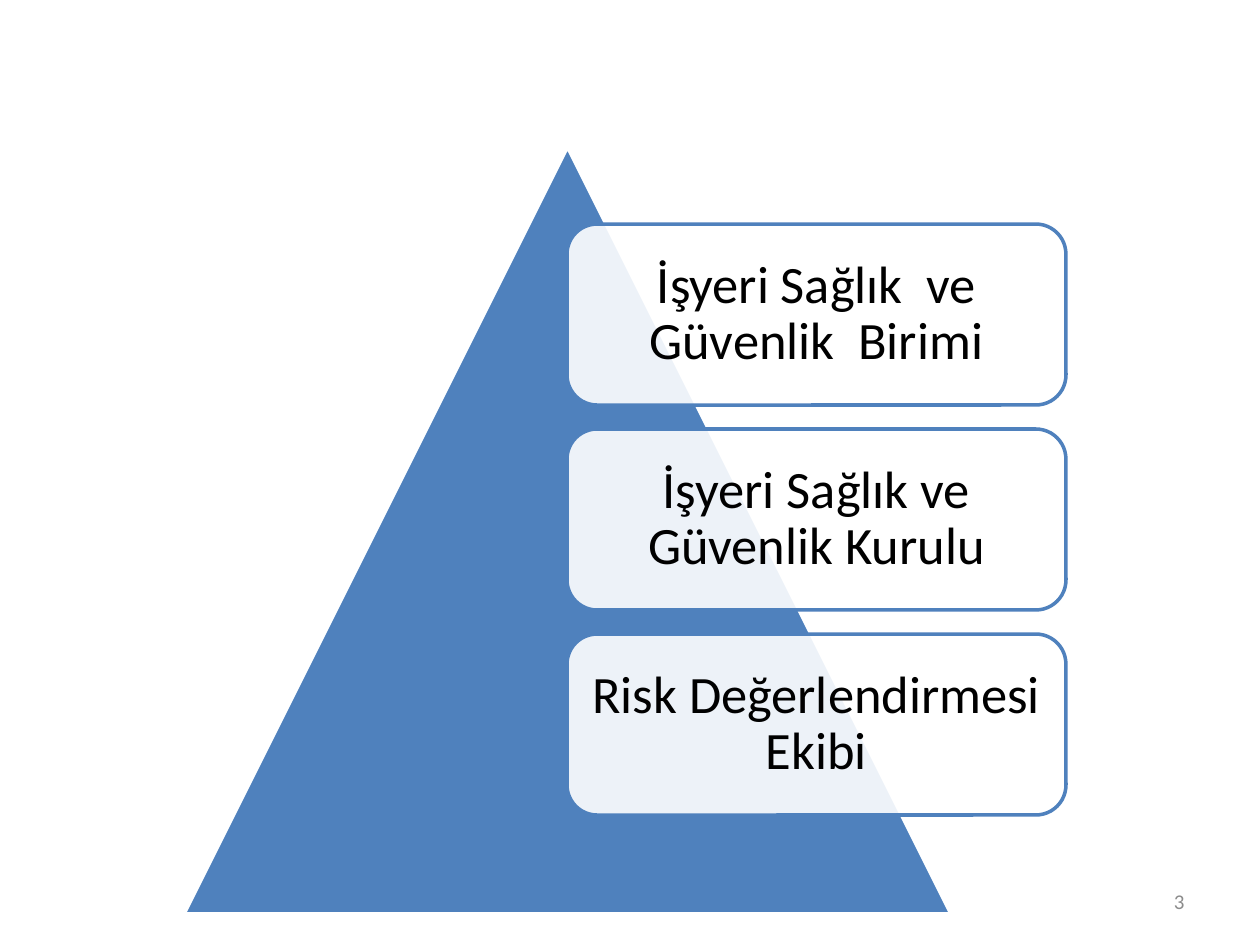
import pptx
import pptx.dml.color
import pptx.enum.shapes
import pptx.enum.text
import pptx.oxml.ns
import pptx.util
from lxml import etree

RGBColor = pptx.dml.color.RGBColor
MSO_SHAPE = pptx.enum.shapes.MSO_SHAPE
PP_ALIGN = pptx.enum.text.PP_ALIGN

BLUE = RGBColor(0x4F, 0x81, 0xBD)
WHITE = RGBColor(0xFF, 0xFF, 0xFF)
BLACK = RGBColor(0x00, 0x00, 0x00)
GRAY = RGBColor(0x8C, 0x8C, 0x8C)

PX_PER_INCH = 126
UNITS = [
    "İşyeri Sağlık  ve Güvenlik  Birimi",
    "İşyeri Sağlık ve Güvenlik Kurulu",
    "Risk Değerlendirmesi Ekibi",
]


def px(length):
    return pptx.util.Emu(round(length * pptx.util.Inches(1) / PX_PER_INCH))


def write(shape, text, *, size, color, align, inset=None, line_spacing=None):
    frame = shape.text_frame
    frame.word_wrap = True
    frame.vertical_anchor = pptx.enum.text.MSO_ANCHOR.MIDDLE
    if inset is not None:
        frame.margin_left = frame.margin_right = px(inset)
        frame.margin_top = frame.margin_bottom = px(inset)
    paragraph = frame.paragraphs[0]
    paragraph.alignment = align
    paragraph.line_spacing = line_spacing
    run = paragraph.add_run()
    run.text = text
    run.font.name = "Calibri"
    run.font.size = pptx.util.Pt(size)
    run.font.color.rgb = color


def add_panel(slide, preset, left, top, width, height, fill, line, opacity=100):
    panel = slide.shapes.add_shape(preset, px(left), px(top), px(width), px(height))
    panel.shadow.inherit = False
    panel.fill.solid()
    panel.fill.fore_color.rgb = fill
    panel.line.color.rgb = line
    panel.line.width = pptx.util.Pt(2)
    if opacity < 100:
        solid = panel.fill._xPr.find(pptx.oxml.ns.qn("a:solidFill"))
        etree.SubElement(solid[0], pptx.oxml.ns.qn("a:alpha"), val=str(opacity * 1000))
    return panel


def add_pyramid_list(slide, left, top, side, units):
    add_panel(slide, MSO_SHAPE.ISOSCELES_TRIANGLE, left, top, side, side, BLUE, WHITE)
    pitch = 205
    for index, unit in enumerate(units):
        unit_box = add_panel(
            slide, MSO_SHAPE.ROUNDED_RECTANGLE,
            left + side // 2, top + 77 + index * pitch, 499, 181,
            WHITE, BLUE, opacity=90,
        )
        write(unit_box, unit, size=30, color=BLACK, align=PP_ALIGN.CENTER,
              inset=15, line_spacing=0.9)


def add_page_number(slide, left, top, width, height, number):
    page_number = slide.shapes.add_textbox(px(left), px(top), px(width), px(height))
    write(page_number, number, size=12, color=GRAY, align=PP_ALIGN.RIGHT)


def main():
    deck = pptx.Presentation()
    deck.slide_width, deck.slide_height = px(1260), px(945)
    slide = deck.slides.add_slide(deck.slide_layouts[6])
    add_page_number(slide, 903, 876, 294, 50, "3")
    add_pyramid_list(slide, 184, 147, 767, UNITS)
    deck.save("out.pptx")


if __name__ == "__main__":
    main()
